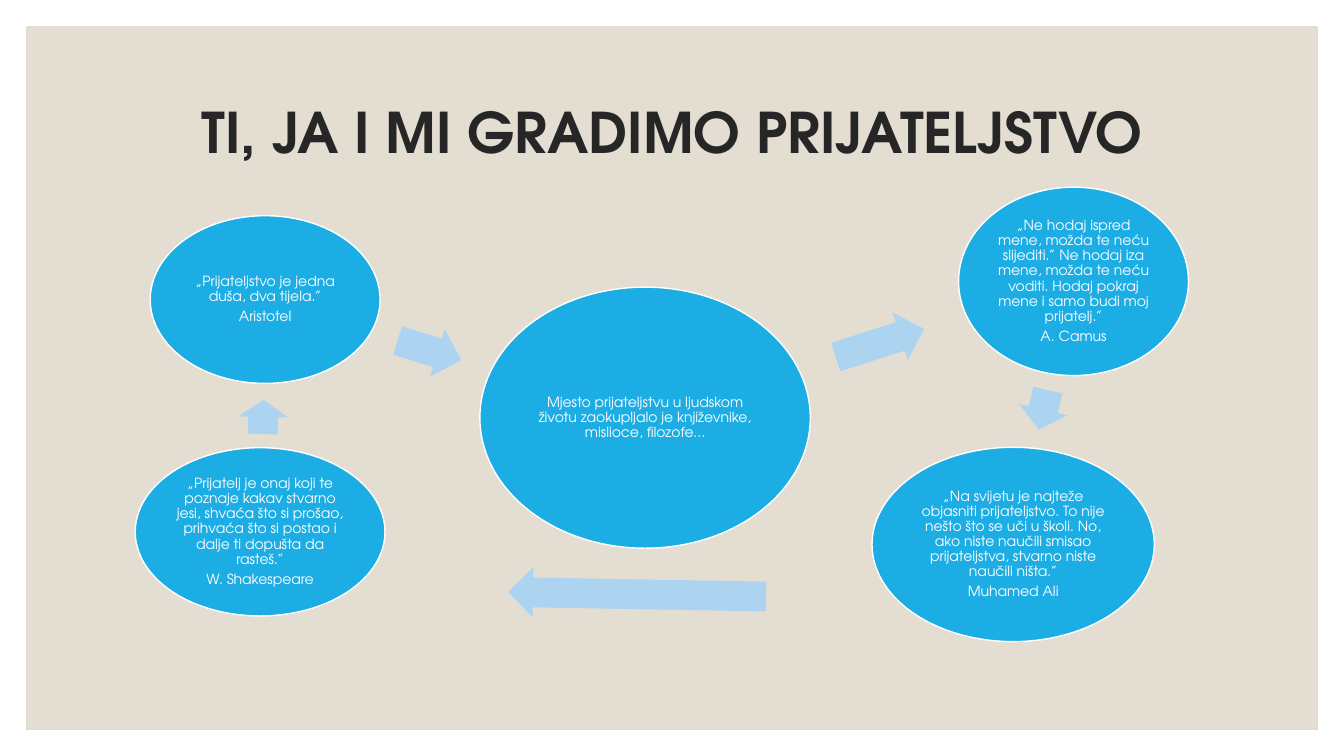
from pptx import Presentation
from pptx.dml.color import RGBColor
from pptx.enum.shapes import MSO_SHAPE
from pptx.enum.text import MSO_ANCHOR, MSO_AUTO_SIZE, PP_ALIGN
from pptx.util import Pt

WHITE = RGBColor(0xFF, 0xFF, 0xFF)
SAND = RGBColor(0xE3, 0xDE, 0xD1)
BLUE = RGBColor(0x1C, 0xAD, 0xE4)
PALE_BLUE = RGBColor(0xAC, 0xD3, 0xEF)
INK = RGBColor(0x26, 0x26, 0x26)
FONT = "TeX Gyre Adventor"

PAGE_WIDTH, PAGE_HEIGHT, MARGIN = 960, 540, 18.7
ARROW_HEIGHT = 35.4

TITLE = "TI, JA I MI GRADIMO PRIJATELJSTVO"
TITLE_BOX = (84.2, 42.5, 792, 108)

# (left, top, width, height), paragraphs
QUOTES = [
    ((342.8, 205.1, 236, 186.5),
     ["Mjesto prijateljstvu u ljudskom životu zaokupljalo je književnike, mislioce, filozofe…"]),
    ((684.7, 133.7, 164.2, 134.6),
     ["„Ne hodaj ispred mene, možda te neću slijediti.” Ne hodaj iza mene, možda te neću "
      "voditi. Hodaj pokraj mene i samo budi moj prijatelj.”", "A. Camus"]),
    ((622.9, 319.5, 201.6, 138.8),
     ["„Na svijetu je najteže objasniti prijateljstvo. To nije nešto što se uči u školi. No, "
      "ako niste naučili smisao prijateljstva, stvarno niste naučili ništa.”", "Muhamed Ali"]),
    ((96.6, 319.8, 178.4, 120.2),
     ["„Prijatelj je onaj koji te poznaje kakav stvarno jesi, shvaća što si prošao, prihvaća "
      "što si postao i dalje ti dopušta da rasteš.”", "W. Shakespeare"]),
    ((107.3, 154.1, 164.2, 119.8),
     ["„Prijateljstvo je jedna duša, dva tijela.”", "Aristotel"]),
]

# left, top, length, rotation
ARROWS = [
    (595.4, 227.3, 66.2, 342.3),
    (730.8, 275, 28.8, 102.9),
    (362.9, 406.8, 184.3, 181),
    (175.7, 280.1, 24.5, 271.3),
    (283, 232.6, 47.5, 17.2),
]


def set_values(target, values):
    for name, value in values.items():
        setattr(target, name, value)


def add_filled(page, kind, box, fill, line=None):
    shape = page.shapes.add_shape(kind, *map(Pt, box))
    shape.shadow.inherit = False
    shape.fill.solid()
    shape.fill.fore_color.rgb = fill
    if line is None:
        shape.line.fill.background()
    else:
        shape.line.color.rgb = line
        shape.line.width = Pt(1)
    return shape


def write(frame, paragraphs, size, color, inset, after=0, bold=False):
    set_values(frame, {"word_wrap": True, "auto_size": MSO_AUTO_SIZE.NONE,
                       "vertical_anchor": MSO_ANCHOR.MIDDLE})
    set_values(frame, {f"margin_{side}": Pt(inset)
                       for side in ("left", "top", "right", "bottom")})
    for index, text in enumerate(paragraphs):
        para = frame.add_paragraph() if index else frame.paragraphs[0]
        set_values(para, {"alignment": PP_ALIGN.CENTER, "line_spacing": 0.9,
                          "space_before": Pt(0), "space_after": Pt(after)})
        span = para.add_run()
        span.text = text
        set_values(span.font, {"name": FONT, "size": Pt(size), "bold": bold})
        span.font.color.rgb = color


def main():
    deck = Presentation()
    set_values(deck, {"slide_width": Pt(PAGE_WIDTH), "slide_height": Pt(PAGE_HEIGHT)})
    page = deck.slides.add_slide(deck.slide_layouts[5])

    panel_box = (MARGIN, MARGIN, PAGE_WIDTH - 2 * MARGIN, PAGE_HEIGHT - 2 * MARGIN)
    panel = add_filled(page, MSO_SHAPE.RECTANGLE, panel_box, SAND)
    title = page.shapes.title
    title._element.addprevious(panel._element)
    set_values(title, dict(zip(("left", "top", "width", "height"), map(Pt, TITLE_BOX))))
    write(title.text_frame, [TITLE], 40, INK, inset=3.6, bold=True)

    for box, paragraphs in QUOTES:
        bubble = add_filled(page, MSO_SHAPE.OVAL, box, BLUE, WHITE)
        write(bubble.text_frame, paragraphs, 10, WHITE, inset=0.9, after=3.5)

    for left, top, length, rotation in ARROWS:
        arrow = add_filled(page, MSO_SHAPE.RIGHT_ARROW,
                           (left, top, length, ARROW_HEIGHT), PALE_BLUE)
        arrow.rotation = rotation
        arrow.adjustments[0] = 0.6
        arrow.adjustments[1] = 0.5

    deck.save("out.pptx")


if __name__ == "__main__":
    main()
